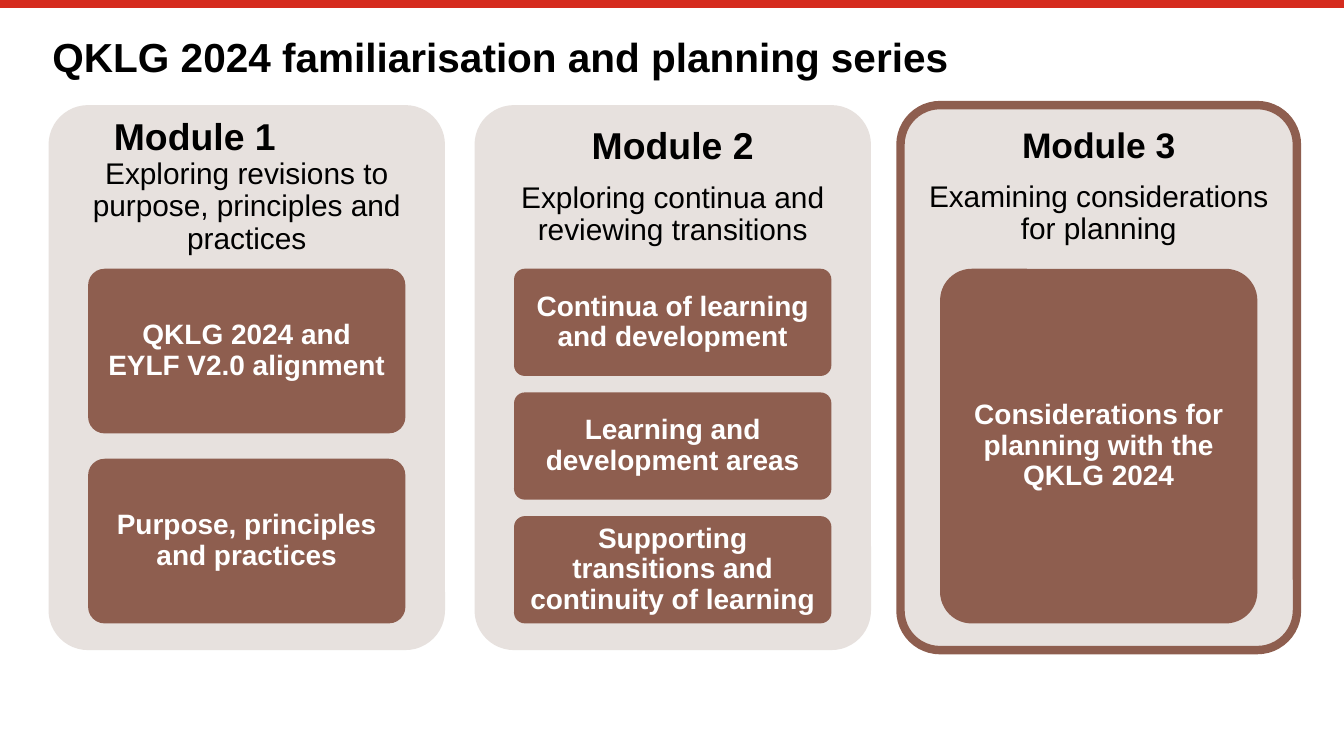
from pptx import Presentation
from pptx.dml.color import RGBColor
from pptx.enum.shapes import MSO_CONNECTOR, MSO_SHAPE
from pptx.enum.text import MSO_ANCHOR, PP_ALIGN
from pptx.oxml.ns import qn
from pptx.util import Pt
from lxml import etree

ROUND, STRAIGHT = MSO_SHAPE.ROUNDED_RECTANGLE, MSO_CONNECTOR.STRAIGHT
MIDDLE, BOTTOM = MSO_ANCHOR.MIDDLE, MSO_ANCHOR.BOTTOM
LEFT, CENTER = PP_ALIGN.LEFT, PP_ALIGN.CENTER

COLORS = {"red": "D52B1E", "panel": "E7E1DE", "brown": "8E5E4F",
          "black": "000000", "white": "FFFFFF"}
FONT = "Arial"

# Column grid
PANEL_LEFT, PANEL_TOP, PANEL_W, PANEL_H = 26, 56.3, 212.4, 292
PANEL_PITCH = 228.2
HEAD_H = 88
TOPIC_INSET, TOPIC_TOP, TOPICS_H = 21.2, 144, 190
GAP_RATIO = 2 / 13  # gap between topics, as a share of topic height

MODULES = [
    {"title": "Module 1", "size": 20, "after": 0, "indent": 29,
     "about": "Exploring revisions to purpose, principles and practices",
     "topics": ["QKLG 2024 and\nEYLF V2.0 alignment",
                "Purpose, principles and practices"]},
    {"title": "Module 2", "size": 20,
     "about": "Exploring continua and reviewing transitions",
     "topics": ["Continua of learning and development",
                "Learning and development areas",
                "Supporting transitions and continuity of learning"]},
    {"title": "Module 3", "size": 19, "outline": "brown",
     "about": "Examining considerations for planning",
     "topics": ["Considerations for planning with the QKLG 2024"]},
]


def rgb(name):
    return RGBColor.from_string(COLORS[name])


def write(p, text, size, color="black", bold=False, align=CENTER,
          spacing=0.9, after=0, indent=0):
    """Fill one paragraph; a newline in the text is a line break."""
    p.alignment, p.line_spacing, p.space_after = align, spacing, Pt(after)
    if indent:
        p._p.get_or_add_pPr().set("marL", str(Pt(indent)))
    for i, line in enumerate(text.split("\n")):
        if i:
            p.add_line_break()
        r = p.add_run()
        r.text = line
        r.font.name, r.font.size, r.font.bold = FONT, Pt(size), bold
        r.font.color.rgb = rgb(color)


class Deck:
    def __init__(self, width, height):
        self.prs = Presentation()
        self.prs.slide_width, self.prs.slide_height = Pt(width), Pt(height)
        self.s = self.prs.slides.add_slide(self.prs.slide_layouts[6])

    def frame(self, sp, anchor, inset_x, inset_y):
        tf = sp.text_frame
        tf.word_wrap, tf.vertical_anchor = True, anchor
        tf.margin_left = tf.margin_right = Pt(inset_x)
        tf.margin_top = tf.margin_bottom = Pt(inset_y)
        return tf

    def rule(self, x1, y1, x2, y2, color, width):
        sp = self.s.shapes.add_connector(STRAIGHT, Pt(x1), Pt(y1), Pt(x2), Pt(y2))
        sp.line.color.rgb, sp.line.width = rgb(color), Pt(width)
        etree.SubElement(sp._element.spPr, qn("a:effectLst"))

    def card(self, x, y, w, h, fill, outline=None):
        sp = self.s.shapes.add_shape(ROUND, Pt(x), Pt(y), Pt(w), Pt(h))
        sp.adjustments[0] = 0.1
        sp.shadow.inherit = False
        sp.fill.solid()
        sp.fill.fore_color.rgb = rgb(fill)
        if outline:
            sp.line.color.rgb, sp.line.width = rgb(outline), Pt(4.5)
        else:
            sp.line.fill.background()
        return sp

    def textbox(self, x, y, w, h, anchor, inset_x, inset_y):
        sp = self.s.shapes.add_textbox(Pt(x), Pt(y), Pt(w), Pt(h))
        return self.frame(sp, anchor, inset_x, inset_y)

    def topic(self, x, y, w, h, text):
        tf = self.frame(self.card(x, y, w, h, "brown"), MIDDLE, 3, 2.2)
        write(tf.paragraphs[0], text, 15, color="white", bold=True)

    def module(self, x, module):
        # Panel and heading
        self.card(x, PANEL_TOP, PANEL_W, PANEL_H, "panel", module.get("outline"))
        tf = self.textbox(x, PANEL_TOP, PANEL_W, HEAD_H, MIDDLE, 6, 6)
        indent = module.get("indent", 0)
        write(tf.paragraphs[0], module["title"], module["size"], bold=True,
              align=LEFT if indent else CENTER, indent=indent,
              after=module.get("after", 8))
        write(tf.add_paragraph(), module["about"], 16)

        # Topics share the same total height in every module
        n = len(module["topics"])
        h = TOPICS_H / (n + GAP_RATIO * (n - 1))
        for i, text in enumerate(module["topics"]):
            y = TOPIC_TOP + i * h * (1 + GAP_RATIO)
            self.topic(x + TOPIC_INSET, y, PANEL_W - 2 * TOPIC_INSET, h, text)


def main():
    deck = Deck(720, 405)

    # Top rule and title
    deck.rule(0, 2.1, 720, 2.1, "red", 4.2)
    title = deck.textbox(21, 18.7, 669, 28, BOTTOM, 7.2, 3.6)
    write(title.paragraphs[0], "QKLG 2024 familiarisation and planning series",
          21.7, bold=True, align=LEFT, spacing=1.0)

    # Module columns
    for i, module in enumerate(MODULES):
        deck.module(PANEL_LEFT + i * PANEL_PITCH, module)

    deck.prs.save("out.pptx")


if __name__ == "__main__":
    main()
